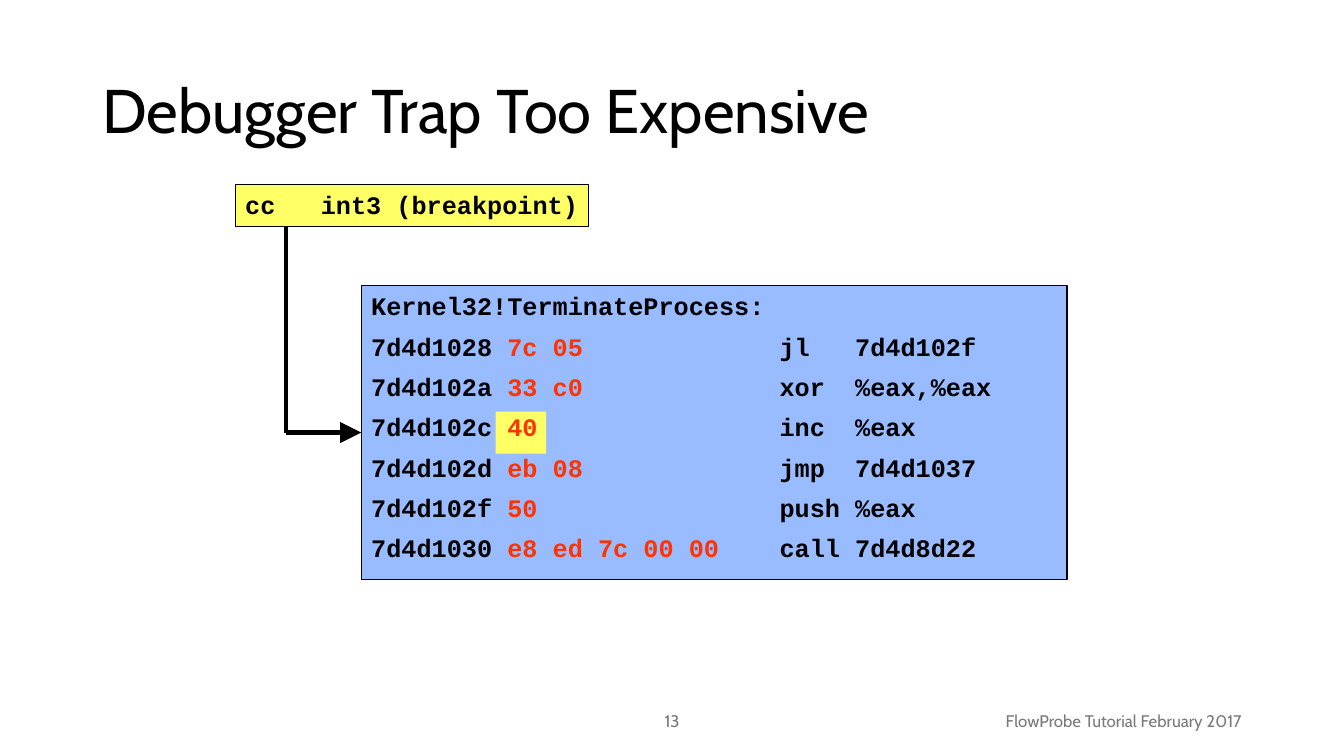
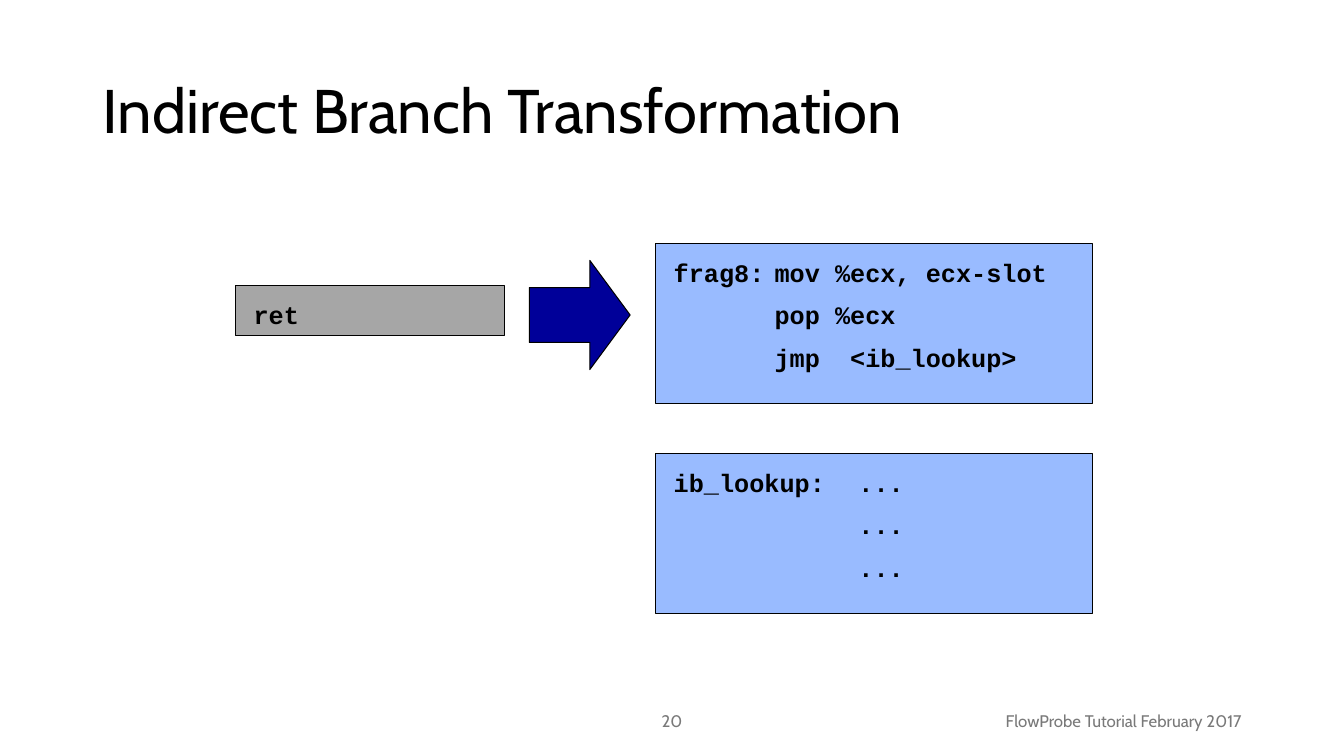
from dataclasses import dataclass

from lxml.etree import SubElement
from pptx import Presentation
from pptx.dml.color import RGBColor
from pptx.enum.shapes import MSO_CONNECTOR, MSO_SHAPE
from pptx.enum.text import MSO_ANCHOR, PP_ALIGN
from pptx.oxml.ns import qn
from pptx.util import Inches, Pt


@dataclass(frozen=True)
class Theme:
    ink: str = "000000"
    muted: str = "797979"
    code_blue: str = "99BBFF"
    highlight: str = "FFFF66"
    opcode: str = "FF3300"
    source_grey: str = "A6A6A6"
    arrow_navy: str = "000099"
    heading_font: str = "Cabin"
    code_font: str = "Courier New"
    title_size: int = 44
    code_size: int = 18
    footer_size: int = 12
    outline: float = 0.75
    trace: float = 3


theme = Theme()
CHAR = 0.15  # inches per character of code
FOOTER = "FlowProbe Tutorial February 2017"

deck = Presentation()
deck.slide_width, deck.slide_height = Inches(13.33), Inches(7.5)
unit = deck.slide_height / 90  # grid of 160 columns by 90 rows


def block(slide, column, row, columns, rows, kind=None, fill=None, outlined=False):
    """Place a preset shape, or a text box when no kind is given."""
    box = [round(n * unit) for n in (column, row, columns, rows)]
    if kind is None:
        return slide.shapes.add_textbox(*box)
    part = slide.shapes.add_shape(kind, *box)
    part.shadow.inherit = False
    if fill:
        part.fill.solid()
        part.fill.fore_color.rgb = RGBColor.from_string(fill)
    else:
        part.fill.background()
    if outlined:
        part.line.color.rgb = RGBColor.from_string(theme.ink)
        part.line.width = Pt(theme.outline)
    else:
        part.line.fill.background()
    return part


def write(part, lines, *, font=theme.code_font, size=theme.code_size, color=theme.ink,
          bold=True, align=PP_ALIGN.LEFT, anchor=MSO_ANCHOR.TOP, line_spacing=None,
          first_before=50, before=0, after=0, tabs=()):
    """Fill a part with lines, each a list of (text, colour or None) pieces.

    Spacing is in percent of a line, tabs in characters."""
    frame = part.text_frame
    frame.word_wrap = True
    frame.vertical_anchor = anchor
    for index, pieces in enumerate(lines):
        paragraph = frame.add_paragraph() if index else frame.paragraphs[0]
        paragraph.alignment = align
        if line_spacing:
            paragraph.line_spacing = line_spacing
        properties = paragraph._p.get_or_add_pPr()
        for tag, percent in (("a:spcBef", before if index else first_before),
                             ("a:spcAft", after)):
            spacing = SubElement(properties, qn(tag))
            SubElement(spacing, qn("a:spcPct"), val=str(percent * 1000))
        if tabs:
            stops = SubElement(properties, qn("a:tabLst"))
            for tab in tabs:
                SubElement(stops, qn("a:tab"), pos=str(Inches(tab * CHAR)), algn="l")
        for text, piece_color in pieces:
            run = paragraph.add_run()
            run.text = text
            run.font.name, run.font.size, run.font.bold = font, Pt(size), bold
            run.font.color.rgb = RGBColor.from_string(piece_color or color)


# Shared frame: title, page number and footer
slides = []
for title, page in (("Debugger Trap Too Expensive", "13"),
                    ("Indirect Branch Transformation", "20")):
    slide = deck.slides.add_slide(deck.slide_layouts[5])
    slides.append(slide)
    heading = slide.shapes.title
    heading.left, heading.top, heading.width, heading.height = (
        round(n * unit) for n in (11, 4.8, 138, 17.4))
    write(heading, [[(title, None)]], font=theme.heading_font, size=theme.title_size,
          bold=False, anchor=MSO_ANCHOR.MIDDLE, line_spacing=0.9, first_before=0)
    for text, column, columns, align in ((page, 53, 54, PP_ALIGN.CENTER),
                                         (FOOTER, 113, 36, PP_ALIGN.RIGHT)):
        write(block(slide, column, 83.4, columns, 4.8), [[(text, None)]],
              font=theme.heading_font, size=theme.footer_size, color=theme.muted,
              bold=False, align=align, anchor=MSO_ANCHOR.MIDDLE, first_before=0)
trap, branch = slides

# Debugger trap: listing with the patched byte highlighted
instructions = (
    ("7d4d1028", "7c 05", "jl", "7d4d102f"),
    ("7d4d102a", "33 c0", "xor", "%eax,%eax"),
    ("7d4d102c", "40", "inc", "%eax"),
    ("7d4d102d", "eb 08", "jmp", "7d4d1037"),
    ("7d4d102f", "50", "push", "%eax"),
    ("7d4d1030", "e8 ed 7c 00 00", "call", "7d4d8d22"),
)
block(trap, 43, 34, 84, 35, MSO_SHAPE.RECTANGLE, theme.code_blue)
block(trap, 59, 49, 6, 5, MSO_SHAPE.RECTANGLE, theme.highlight)
listing = block(trap, 43, 34, 84, 35, MSO_SHAPE.RECTANGLE, outlined=True)
write(listing,
      [[("Kernel32!TerminateProcess:", None)]]
      + [[(f"{address} ", None), (opcode, theme.opcode), (f"\t{name}\t{operand}", None)]
         for address, opcode, name, operand in instructions],
      after=40, tabs=(27, 32))

# Debugger trap: breakpoint and its path into the listing
breakpoint_box = block(trap, 28, 22, 42, 5, MSO_SHAPE.RECTANGLE, theme.highlight, True)
write(breakpoint_box, [[("cc\tint3 (breakpoint)", None)]], after=40, tabs=(5,))
bend = 51.5  # middle row of the listing
traces = []
for start_column, start_row, end_column, end_row in ((34, 27, 34, bend),
                                                     (34, bend, 43, bend)):
    trace = trap.shapes.add_connector(
        MSO_CONNECTOR.STRAIGHT,
        *(round(n * unit) for n in (start_column, start_row, end_column, end_row)))
    trace.line.color.rgb = RGBColor.from_string(theme.ink)
    trace.line.width = Pt(theme.trace)
    SubElement(trace._element.spPr, qn("a:effectLst"))
    traces.append(trace)
into_listing = traces[-1]
into_listing.end_connect(listing, 1)
SubElement(into_listing.line._get_or_add_ln(), qn("a:tailEnd"),
           type="triangle", w="lg", len="lg")

# Indirect branch: original return instruction and arrow
block(branch, 28, 34, 32, 6, MSO_SHAPE.RECTANGLE, theme.source_grey, True)
write(block(branch, 29, 35, 34, 4.8), [[("ret", None)]])
becomes = block(branch, 63, 31, 12, 13, MSO_SHAPE.RIGHT_ARROW, theme.arrow_navy, True)
becomes.adjustments[0], becomes.adjustments[1] = 0.5, 0.4

# Indirect branch: code fragments, each a label beside its instructions
fragments = (
    (29, "frag8:", 14, 91, ("mov %ecx, ecx-slot", "pop %ecx", "jmp\t<ib_lookup>")),
    (54, "ib_lookup:", 21, 101, ("...", "...", "...")),
)
for row, label, label_columns, code_column, code in fragments:
    block(branch, 78, row, 52, 19, MSO_SHAPE.RECTANGLE, theme.code_blue, True)
    write(block(branch, 79, row + 1, label_columns, 15.6), [[(label, None)]])
    write(block(branch, code_column, row + 1, 130 - code_column, 15.6),
          [[(line, None)] for line in code], before=50, tabs=(5,))

deck.save("out.pptx")
